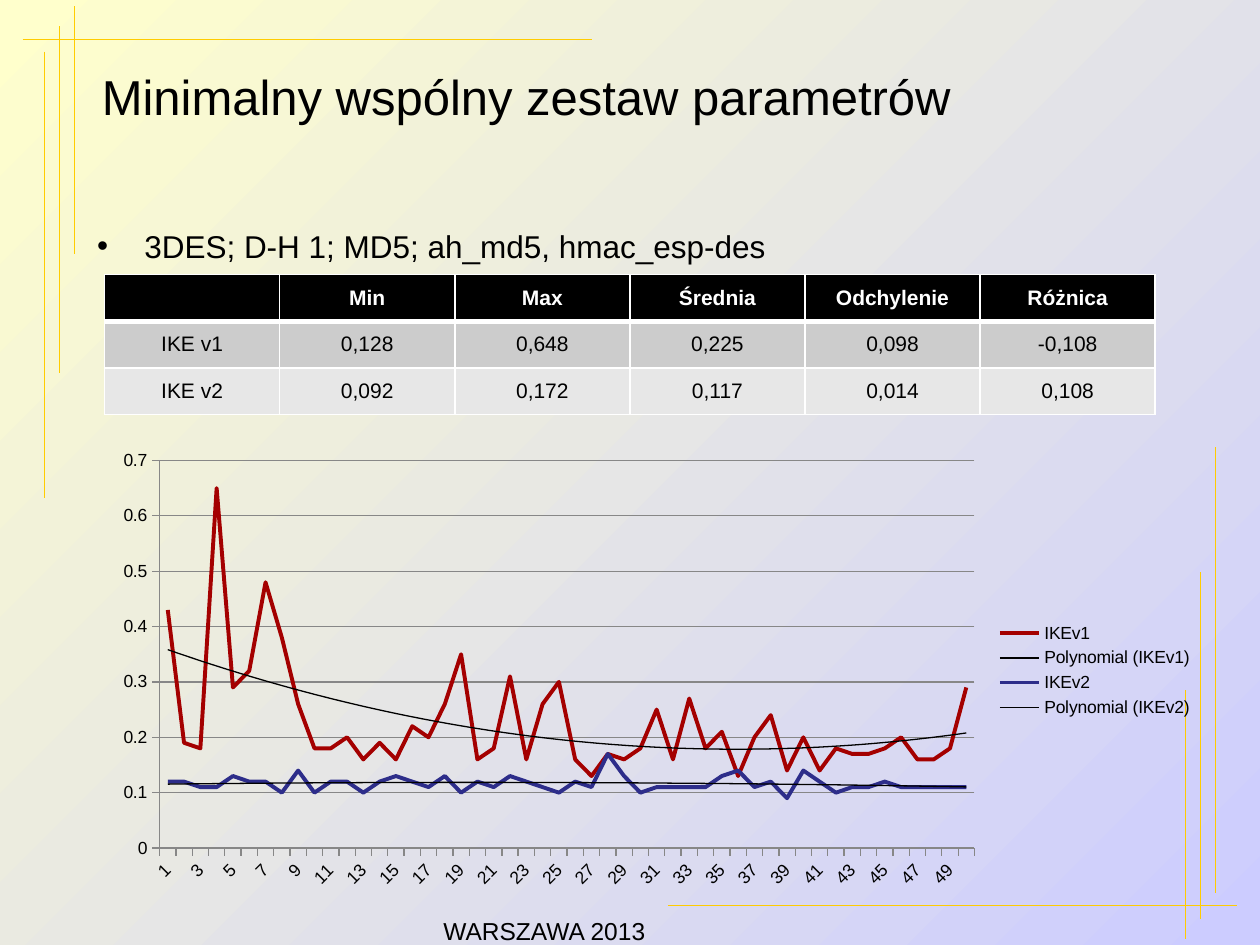
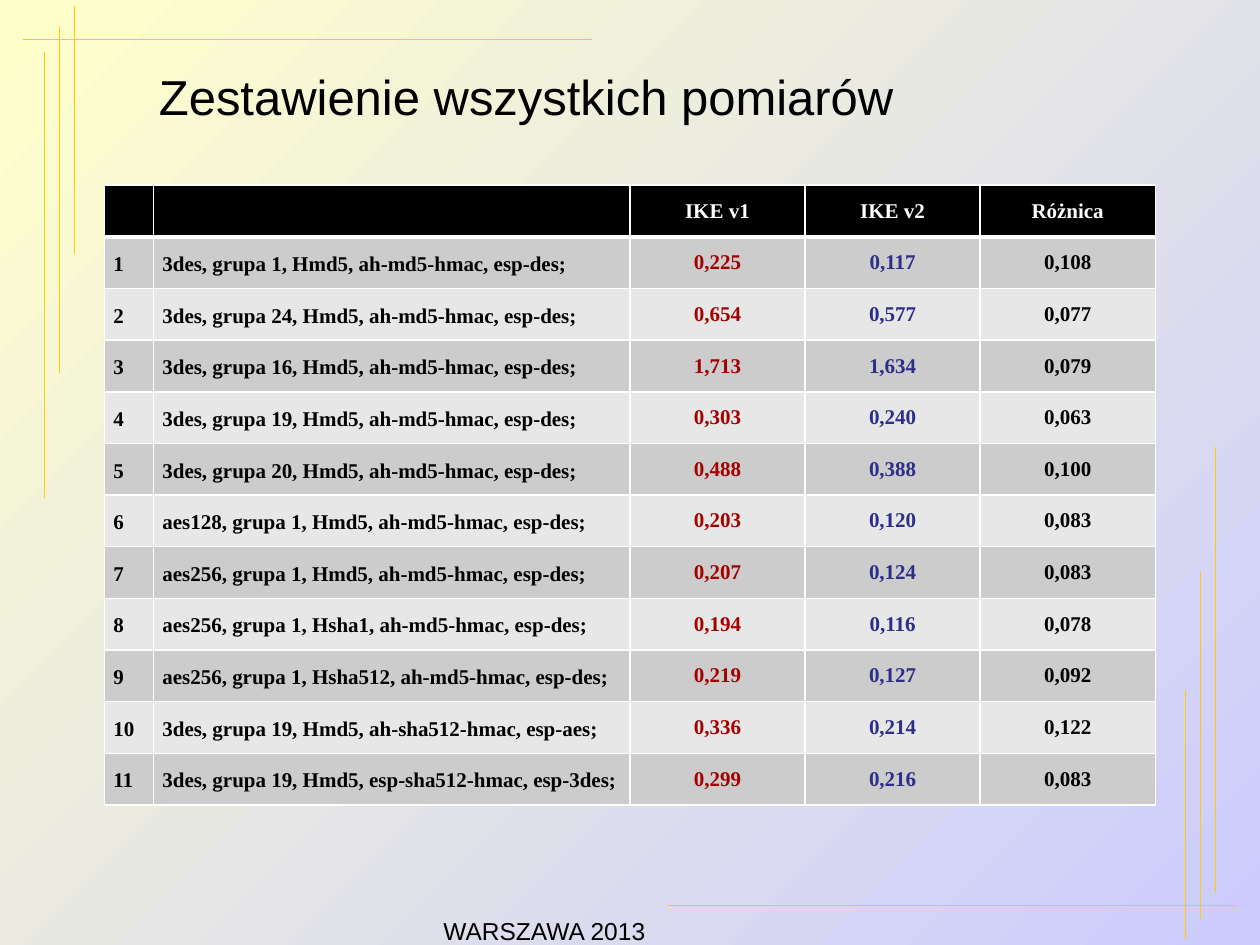
import pptx
import pptx.chart.data
import pptx.dml.color
import pptx.enum.chart
import pptx.enum.shapes
import pptx.enum.text
import pptx.oxml
import pptx.oxml.ns
import pptx.util
from lxml import etree

Inches = pptx.util.Inches
Pt = pptx.util.Pt
qn = pptx.oxml.ns.qn
ALIGN = pptx.enum.text.PP_ALIGN
ANCHOR = pptx.enum.text.MSO_ANCHOR

WIDTH, HEIGHT = 10, 7.5
BLACK, WHITE = "000000", "FFFFFF"
GOLD, GRID = "FFCC00", "878787"
RED, BLUE = "A40000", "2D2D8A"
BACKGROUND = ("FFFFCC", "CCCCFF")
BANDS = ("CCCCCC", "E7E7E7")
SANS, SERIF = "Arial", "Times New Roman"

CORNER_LINES = (
    (0.18, 0.31, 4.7, 0.31),
    (0.47, 0.21, 0.47, 2.96),
    (0.59, 0.05, 0.59, 2.02),
    (0.35, 0.41, 0.35, 3.95),
)

PARAMETERS = (
    ("", "Min", "Max", "Średnia", "Odchylenie", "Różnica"),
    ("IKE v1", "0,128", "0,648", "0,225", "0,098", "-0,108"),
    ("IKE v2", "0,092", "0,172", "0,117", "0,014", "0,108"),
)

MEASUREMENTS = (
    ("3des, grupa 1, Hmd5, ah-md5-hmac, esp-des;", "0,225", "0,117", "0,108"),
    ("3des, grupa 24, Hmd5, ah-md5-hmac, esp-des;", "0,654", "0,577", "0,077"),
    ("3des, grupa 16, Hmd5, ah-md5-hmac, esp-des;", "1,713", "1,634", "0,079"),
    ("3des, grupa 19, Hmd5, ah-md5-hmac, esp-des;", "0,303", "0,240", "0,063"),
    ("3des, grupa 20, Hmd5, ah-md5-hmac, esp-des;", "0,488", "0,388", "0,100"),
    ("aes128, grupa 1, Hmd5, ah-md5-hmac, esp-des;", "0,203", "0,120", "0,083"),
    ("aes256, grupa 1, Hmd5, ah-md5-hmac, esp-des;", "0,207", "0,124", "0,083"),
    ("aes256, grupa 1, Hsha1, ah-md5-hmac, esp-des;", "0,194", "0,116", "0,078"),
    ("aes256, grupa 1, Hsha512, ah-md5-hmac, esp-des;", "0,219", "0,127", "0,092"),
    ("3des, grupa 19, Hmd5, ah-sha512-hmac, esp-aes;", "0,336", "0,214", "0,122"),
    ("3des, grupa 19, Hmd5, esp-sha512-hmac, esp-3des;", "0,299", "0,216", "0,083"),
)

IKE_SERIES = (
    ("IKEv1", RED, (
        0.43, 0.19, 0.18, 0.65, 0.29, 0.32, 0.48, 0.38, 0.26, 0.18,
        0.18, 0.2, 0.16, 0.19, 0.16, 0.22, 0.2, 0.26, 0.35, 0.16,
        0.18, 0.31, 0.16, 0.26, 0.3, 0.16, 0.13, 0.17, 0.16, 0.18,
        0.25, 0.16, 0.27, 0.18, 0.21, 0.13, 0.2, 0.24, 0.14, 0.2,
        0.14, 0.18, 0.17, 0.17, 0.18, 0.2, 0.16, 0.16, 0.18, 0.29)),
    ("IKEv2", BLUE, (
        0.12, 0.12, 0.11, 0.11, 0.13, 0.12, 0.12, 0.1, 0.14, 0.1,
        0.12, 0.12, 0.1, 0.12, 0.13, 0.12, 0.11, 0.13, 0.1, 0.12,
        0.11, 0.13, 0.12, 0.11, 0.1, 0.12, 0.11, 0.17, 0.13, 0.1,
        0.11, 0.11, 0.11, 0.11, 0.13, 0.14, 0.11, 0.12, 0.09, 0.14,
        0.12, 0.1, 0.11, 0.11, 0.12, 0.11, 0.11, 0.11, 0.11, 0.11)),
)


def color(code):
    """Return the colour for a hex string."""
    return pptx.dml.color.RGBColor.from_string(code)


def chart_xml(markup):
    """Parse chart markup that uses the c and a prefixes."""
    head, rest = markup.split(">", 1)
    return pptx.oxml.parse_xml(f"{head} {pptx.oxml.ns.nsdecls('c', 'a')}>{rest}")


def write(text_frame, text, size=12, ink=BLACK, font=SANS, bold=False,
          align=ALIGN.LEFT, line_spacing=None):
    """Fill a text frame with one formatted paragraph."""
    text_frame.text = text
    paragraph = text_frame.paragraphs[0]
    paragraph.alignment = align
    paragraph.space_before = Pt(0)
    paragraph.line_spacing = line_spacing
    paragraph.font.size = Pt(size)
    paragraph.font.name = font
    paragraph.font.bold = bold
    paragraph.font.color.rgb = color(ink)


def place(shape, left, top, width, height):
    """Move and size a shape in inches."""
    shape.left, shape.top = Inches(left), Inches(top)
    shape.width, shape.height = Inches(width), Inches(height)


def add_line(slide, *ends):
    """Draw one thin gold line."""
    line = slide.shapes.add_connector(
        pptx.enum.shapes.MSO_CONNECTOR.STRAIGHT, *map(Inches, ends))
    line.line.color.rgb = color(GOLD)
    line.line.width = Pt(0.5)
    etree.SubElement(line._element.spPr, qn("a:effectLst"))


def add_slide(presentation, layout, title):
    """Add a slide with its background, corner lines, title and footer."""
    slide = presentation.slides.add_slide(presentation.slide_layouts[layout])
    fill = slide.background.fill
    fill.gradient()
    fill.gradient_angle = 315
    for position, (stop, code) in enumerate(zip(fill.gradient_stops, BACKGROUND)):
        stop.position = position
        stop.color.rgb = color(code)
    for left, top, right, bottom in CORNER_LINES:
        add_line(slide, left, top, right, bottom)
        add_line(slide, WIDTH - right, HEIGHT - bottom, WIDTH - left, HEIGHT - top)
    place(slide.shapes.title, 0.67, 0.3, 7.01, 0.93)
    frame = slide.shapes.title.text_frame
    frame.vertical_anchor = ANCHOR.MIDDLE
    frame.auto_size = pptx.enum.text.MSO_AUTO_SIZE.NONE
    write(frame, title, size=28, align=ALIGN.CENTER)
    footer = slide.shapes.add_textbox(
        Inches(3.42), Inches(7.22), Inches(3.17), Inches(0.14))
    footer.text_frame.word_wrap = True
    write(footer.text_frame, "WARSZAWA 2013", size=14)
    return slide


def add_bullet(slide, text):
    """Write the bullet line in the body placeholder."""
    body = slide.placeholders[1]
    place(body, 0.67, 1.75, 8.66, 5.23)
    body.text_frame.auto_size = pptx.enum.text.MSO_AUTO_SIZE.NONE
    write(body.text_frame, text, size=18)


def set_borders(cell, **widths):
    """Give a cell white borders of the given widths in points."""
    properties = cell._tc.get_or_add_tcPr()
    for side in "LRTB":
        line = etree.SubElement(
            properties, qn(f"a:ln{side}"), w=str(Pt(widths.get(side, 1))))
        fill = etree.SubElement(line, qn("a:solidFill"))
        etree.SubElement(fill, qn("a:srgbClr"), val=WHITE)


def add_table(slide, rows, top, column_widths, row_height, column_formats, **header):
    """Add a banded table with a black header row."""
    table = slide.shapes.add_table(
        len(rows), len(column_widths), Inches(0.83), Inches(top),
        Inches(sum(column_widths)), Inches(row_height * len(rows))).table
    for column, width in zip(table.columns, column_widths):
        column.width = Inches(width)
    for row_index, texts in enumerate(rows):
        table.rows[row_index].height = Inches(row_height)
        for column_index, text in enumerate(texts):
            cell = table.cell(row_index, column_index)
            cell.margin_left = cell.margin_right = Inches(0.07)
            cell.margin_top = cell.margin_bottom = 0
            cell.vertical_anchor = ANCHOR.MIDDLE
            set_borders(cell, B=3 if row_index == 0 else 1,
                        T=3 if row_index == 1 else 1)
            cell.fill.solid()
            band = BANDS[(row_index - 1) % 2] if row_index else BLACK
            cell.fill.fore_color.rgb = color(band)
            if text:
                style = column_formats[column_index] if row_index else header
                write(cell.text_frame, text, **style)


def add_trend(series):
    """Add a black second-order polynomial trend line to a series."""
    trend = chart_xml(
        '<c:trendline><c:spPr><a:ln w="9525"><a:solidFill>'
        f'<a:srgbClr val="{BLACK}"/></a:solidFill></a:ln></c:spPr>'
        '<c:trendlineType val="poly"/><c:order val="2"/>'
        '<c:dispRSqr val="0"/><c:dispEq val="0"/></c:trendline>')
    series._element.find(qn("c:cat")).addprevious(trend)


def style_axes(chart):
    """Format both axes and slant the category labels."""
    for axis in (chart.category_axis, chart.value_axis):
        axis.format.line.color.rgb = color(GRID)
        axis.major_tick_mark = pptx.enum.chart.XL_TICK_MARK.OUTSIDE
        axis.minor_tick_mark = pptx.enum.chart.XL_TICK_MARK.NONE
        axis.tick_labels.font.size = Pt(10)
    values = chart.value_axis
    values.minimum_scale, values.maximum_scale, values.major_unit = 0, 0.7, 0.1
    values.tick_labels.number_format = "General"
    values.tick_labels.number_format_is_linked = False
    values.major_gridlines.format.line.color.rgb = color(GRID)
    categories = chart.category_axis._element
    categories.find(f"{qn('c:txPr')}/{qn('a:bodyPr')}").set("rot", "-2700000")
    categories.find(qn("c:noMultiLvlLbl")).addprevious(
        chart_xml('<c:tickLblSkip val="2"></c:tickLblSkip>'))


def set_plot_area(chart, **box):
    """Fix the inner plot area as fractions of the chart."""
    parts = "".join(f'<c:{key} val="{value}"/>' for key, value in box.items())
    layout = chart_xml(
        '<c:layout><c:manualLayout><c:layoutTarget val="inner"/>'
        '<c:xMode val="edge"/><c:yMode val="edge"/>'
        f'{parts}</c:manualLayout></c:layout>')
    plot_area = chart._chartSpace.chart.plotArea
    for old_layout in plot_area.findall(qn("c:layout")):
        plot_area.remove(old_layout)
    plot_area.insert(0, layout)


def add_line_chart(slide):
    """Add the chart of IKE times with trend lines."""
    data = pptx.chart.data.CategoryChartData()
    data.categories = [str(number) for number in range(1, 51)]
    for name, _, values in IKE_SERIES:
        data.add_series(name, values)
    chart = slide.shapes.add_chart(
        pptx.enum.chart.XL_CHART_TYPE.LINE, Inches(0.83), Inches(3.51),
        Inches(8.74), Inches(3.62), data).chart
    chart.has_title = False
    chart.font.size = Pt(10)
    chart.font.name = SANS
    chart.font.color.rgb = color(BLACK)
    chart.has_legend = True
    chart.legend.position = pptx.enum.chart.XL_LEGEND_POSITION.RIGHT
    chart.legend.include_in_layout = False
    chart.plots[0].vary_by_categories = False
    for series, (_, code, _) in zip(chart.plots[0].series, IKE_SERIES):
        series.smooth = False
        series.format.line.color.rgb = color(code)
        series.format.line.width = Pt(2.25)
        add_trend(series)
    style_axes(chart)
    set_plot_area(chart, x=0.05, y=0.04, w=0.74, h=0.85)


def main():
    """Build and save both slides."""
    presentation = pptx.Presentation()
    presentation.slide_width = Inches(WIDTH)
    presentation.slide_height = Inches(HEIGHT)

    slide = add_slide(presentation, 1, "Minimalny wspólny zestaw parametrów")
    add_bullet(slide, "3DES; D-H 1; MD5; ah_md5, hmac_esp-des")
    centred = {"align": ALIGN.CENTER}
    add_table(slide, PARAMETERS, 2.18, [1.39] * 6, 0.37, [centred] * 6,
              ink=WHITE, bold=True, **centred)
    add_line_chart(slide)

    slide = add_slide(presentation, 5, "Zestawienie wszystkich pomiarów")
    rows = [("", "", "IKE v1", "IKE v2", "Różnica")]
    rows += [(str(number), *row) for number, row in enumerate(MEASUREMENTS, 1)]
    serif = {"font": SERIF, "bold": True}
    label = {**serif, "line_spacing": 1.15}
    formats = [label, label] + [
        {**serif, **centred, "ink": ink} for ink in (RED, BLUE, BLACK)]
    add_table(slide, rows, 1.47, [0.39, 3.78, 1.39, 1.39, 1.39], 0.41, formats,
              ink=WHITE, **serif, **centred)

    presentation.save("out.pptx")


if __name__ == "__main__":
    main()
